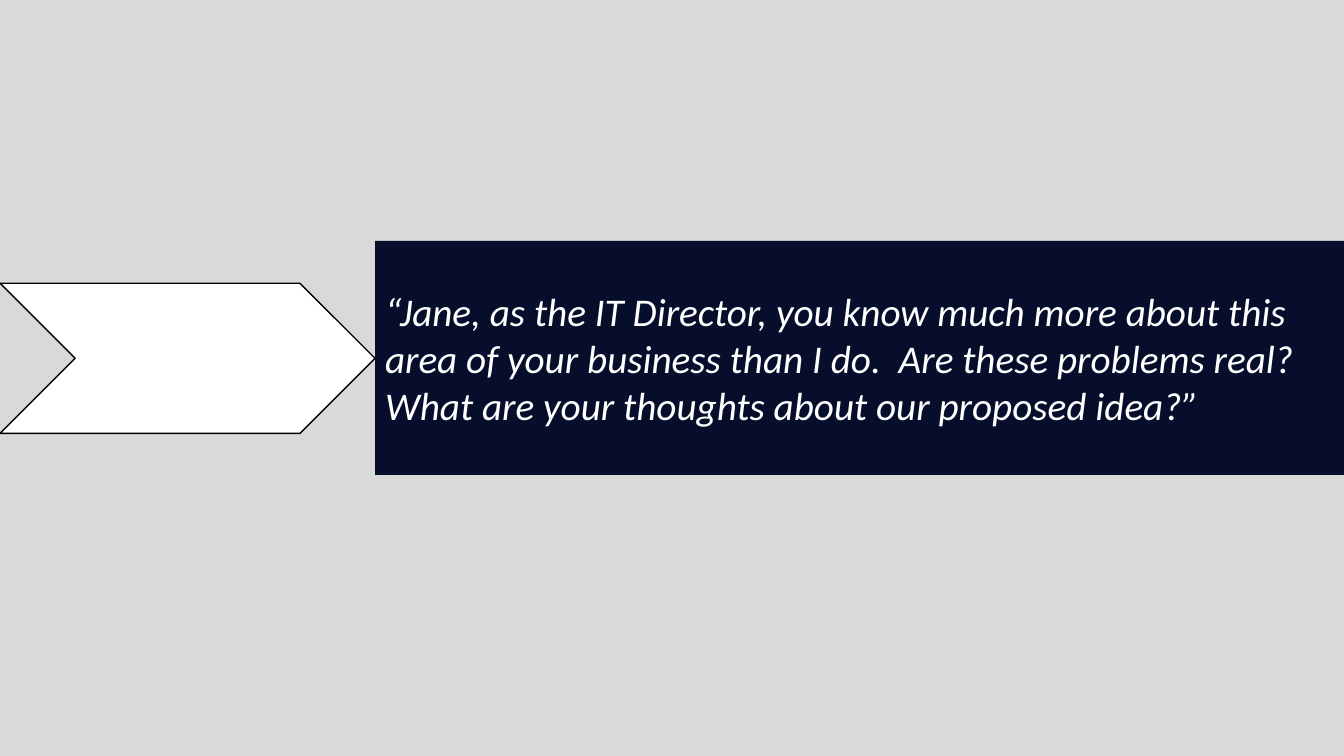
from pptx import Presentation
from pptx import util as u
from pptx.dml.color import RGBColor
from pptx.enum import shapes, text

SLIDE_W, SLIDE_H = 13.33, 7.5
QUOTE = ("“Jane, as the IT Director, you know much more about this area of your "
         "business than I do.  Are these problems real?  What are your thoughts "
         "about our proposed idea?”")


def color(hex_code):
    return RGBColor.from_string(hex_code)


def write(shape, words, size=28, font="Calibri", ink="FFFFFF", italic=False,
          align=text.PP_ALIGN.LEFT, anchor=text.MSO_ANCHOR.MIDDLE):
    frame = shape.text_frame
    frame.word_wrap = True
    frame.vertical_anchor = anchor
    paragraph = frame.paragraphs[0]
    paragraph.alignment = align
    run = paragraph.add_run()
    run.text = words
    run.font.name = font
    run.font.size = u.Pt(size)
    run.font.italic = italic
    run.font.color.rgb = color(ink)


class QuoteSlide:
    BACKGROUND = "D9D9D9"
    NAVY = "070E2B"
    WHITE = "FFFFFF"
    BLACK = "000000"

    def __init__(self, deck):
        self.slide = deck.slides.add_slide(deck.slide_layouts[6])
        fill = self.slide.background.fill
        fill.solid()
        fill.fore_color.rgb = color(self.BACKGROUND)

    def shape(self, kind, left, top, width, height, fill, line=None):
        item = self.slide.shapes.add_shape(
            kind, u.Inches(left), u.Inches(top), u.Inches(width), u.Inches(height))
        item.shadow.inherit = False
        item.fill.solid()
        item.fill.fore_color.rgb = color(fill)
        if line:
            item.line.color.rgb = color(line)
            item.line.width = u.Pt(1)
        else:
            item.line.fill.background()
        return item

    def pointer(self, left, top, width, height):
        return self.shape(shapes.MSO_SHAPE.CHEVRON, left, top, width, height,
                          self.WHITE, self.BLACK)

    def banner(self, words, left, top, width, height):
        panel = self.shape(shapes.MSO_SHAPE.RECTANGLE, left, top, width, height,
                           self.NAVY)
        write(panel, words, italic=True, ink=self.WHITE)
        return panel


def main():
    deck = Presentation()
    deck.slide_width, deck.slide_height = u.Inches(SLIDE_W), u.Inches(SLIDE_H)
    page = QuoteSlide(deck)

    # Chevron pointing at the quote
    pointer_width = 3.72
    page.pointer(0, 2.81, pointer_width, 1.49)

    # Quote banner running to the right edge
    page.banner(QUOTE, pointer_width, 2.39, SLIDE_W - pointer_width, 2.32)

    deck.save("out.pptx")


if __name__ == "__main__":
    main()
